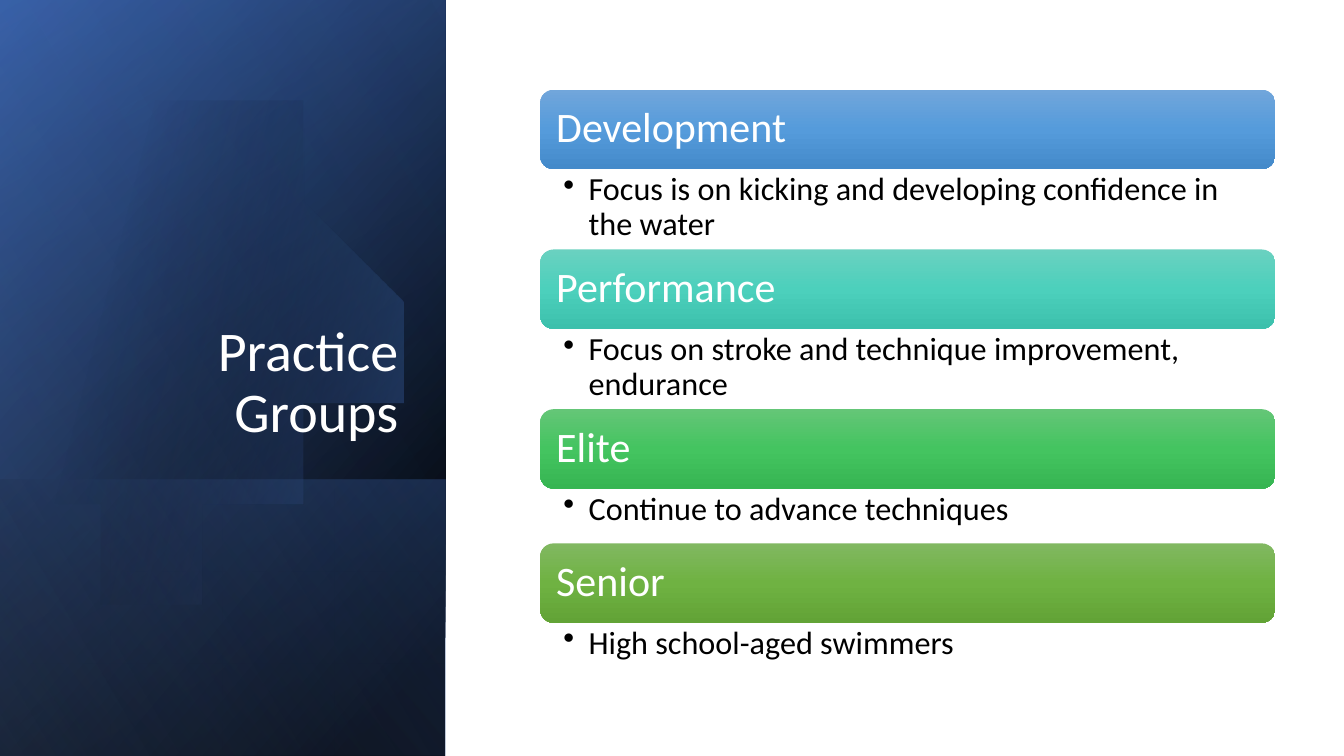
import dataclasses

import pptx
import pptx.dml.color
import pptx.enum.shapes
import pptx.enum.text
import pptx.oxml
import pptx.oxml.ns
import pptx.util

WIDE = pptx.util.Inches(13.33)
HIGH = pptx.util.Inches(7.5)
FONT = "Calibri"
HUES = {
    "black": "000000", "white": "FFFFFF", "navy": "2F5597",
    "blue": "4472C4", "pale": "8FAADC",
}

# Shares of the slide, in percent
SIDE = 33.15
LEFT, SPAN, TOP = 40.2, 54.68, 11.87
BAR = 10.5
TALL, LOW = 10.63, 7.25


@dataclasses.dataclass
class Stop:
    at: int
    hue: str
    alpha: int = 100


@dataclasses.dataclass
class Panel:
    top: float
    angle: int
    stops: list[Stop]


@dataclasses.dataclass
class Group:
    name: str
    note: str
    room: float
    hues: tuple[str, str, str]


BACK = [
    Panel(0, 50, [Stop(8, HUES["black"]), Stop(100, HUES["navy"])]),
    Panel(0, 30, [Stop(0, HUES["black"], 0), Stop(99, HUES["blue"], 46)]),
    Panel(63.47, 130, [Stop(2, HUES["blue"], 29), Stop(100, HUES["black"], 30)]),
]
GLOW = Panel(0, 120, [Stop(0, HUES["black"], 0), Stop(99, HUES["pale"], 11)])
DISC = [Stop(29, HUES["black"], 0), Stop(100, HUES["blue"], 43)]

# Bezier arcs of the disc in inches: two handles and an end point each
START = (-0.15, 1.75)
ARCS = [
    ((-0.15, 1.75), (0, 1.61), (0, 1.61)),
    ((0.23, 1.42), (0.5, 1.28), (0.8, 1.19)),
    ((1.03, 1.13), (1.26, 1.1), (1.49, 1.1)),
    ((2.46, 1.12), (3.35, 1.77), (3.63, 2.75)),
    ((3.98, 3.97), (3.28, 5.23), (2.07, 5.58)),
    ((1.31, 5.8), (0.53, 5.61), (-0.03, 5.14)),
    ((-0.03, 5.14), (-0.15, 5.03), (-0.15, 5.03)),
]

GROUPS = [
    Group("Development", "Focus is on kicking and developing confidence in the water",
          TALL, ("71A6DB", "559BDB", "448ACA")),
    Group("Performance", "Focus on stroke and technique improvement, endurance",
          TALL, ("6AD1C0", "4CD0BC", "3CC0AC")),
    Group("Elite", "Continue to advance techniques",
          LOW, ("64C677", "44C460", "36B552")),
    Group("Senior", "High school-aged swimmers",
          LOW, ("81B861", "6FB242", "62A336")),
]


def across(share: float) -> int:
    return round(WIDE * share / 100)


def down(share: float) -> int:
    return round(HIGH * share / 100)


def shade(shape, stops: list[Stop], angle: int) -> None:
    """Give the shape a gradient, no line and no shadow."""
    marks = "".join(
        f'<a:gs pos="{s.at * 1000}"><a:srgbClr val="{s.hue}">'
        f'<a:alpha val="{s.alpha * 1000}"/></a:srgbClr></a:gs>' for s in stops)
    shape.shadow.inherit = False
    shape.line.fill.background()
    shape.fill.gradient()
    props = shape.element.spPr
    props.replace(
        props.find(pptx.oxml.ns.qn("a:gradFill")),
        pptx.oxml.parse_xml(
            f'<a:gradFill {pptx.oxml.ns.nsdecls("a")} rotWithShape="1">'
            f'<a:gsLst>{marks}</a:gsLst>'
            f'<a:lin ang="{angle * 60000}" scaled="0"/></a:gradFill>'))


def draw_panel(slide, panel: Panel) -> None:
    """Draw a side panel as a rectangle turned by a quarter and mirrored."""
    wide, high = across(SIDE), down(100 - panel.top)
    shift = (wide - high) // 2
    shape = slide.shapes.add_shape(
        pptx.enum.shapes.MSO_SHAPE.RECTANGLE,
        shift, down(panel.top) - shift, high, wide)
    shape.rotation = 90
    shape.element.spPr.xfrm.set("flipH", "1")
    shade(shape, panel.stops, panel.angle)


def trace(steps: int = 16) -> list[tuple[float, float]]:
    """Points along the arcs of the disc."""
    dots, last = [], START
    for one, two, end in ARCS:
        for step in range(1, steps + 1):
            t = step / steps
            u = 1 - t
            dots.append(tuple(
                u**3 * a + 3 * u * u * t * b + 3 * u * t * t * c + t**3 * d
                for a, b, c, d in zip(last, one, two, end)))
        last = end
    return dots


def draw_disc(slide) -> None:
    pen = slide.shapes.build_freeform(*START, scale=pptx.util.Inches(1))
    pen.add_line_segments(trace(), close=True)
    shade(pen.convert_to_shape(), DISC, 14)


def write(shape, text: str, size: int, hue: str, anchor: str, pads=None):
    """Fill the shape with one paragraph and return it."""
    frame = shape.text_frame
    frame.word_wrap = True
    frame.auto_size = pptx.enum.text.MSO_AUTO_SIZE.NONE
    frame.vertical_anchor = pptx.enum.text.MSO_ANCHOR[anchor]
    if pads:
        side, edge = map(pptx.util.Inches, pads)
        frame.margin_left = frame.margin_right = side
        frame.margin_top = frame.margin_bottom = edge
    para = frame.paragraphs[0]
    para.text = text
    para.line_spacing = 0.9
    para.alignment = pptx.enum.text.PP_ALIGN.LEFT
    para.font.name = FONT
    para.font.size = pptx.util.Pt(size)
    para.font.color.rgb = pptx.dml.color.RGBColor.from_string(HUES[hue])
    return para


def draw_title(slide) -> None:
    title = slide.shapes.title
    title.left, title.top = across(4.8), down(24.53)
    title.width, title.height = across(25.58), down(34.93)
    para = write(title, "Practice Groups", 40, "white", "BOTTOM")
    para.alignment = pptx.enum.text.PP_ALIGN.RIGHT
    slide.shapes.element.append(title.element)  # bring above the panels


def draw_group(slide, group: Group, top: float) -> None:
    bar = slide.shapes.add_shape(
        pptx.enum.shapes.MSO_SHAPE.ROUNDED_RECTANGLE,
        across(LEFT), down(top), across(SPAN), down(BAR))
    shade(bar, [Stop(50 * i, hue) for i, hue in enumerate(group.hues)], 90)
    write(bar, group.name, 30, "white", "MIDDLE", (0.12, 0.12))

    note = slide.shapes.add_textbox(
        across(LEFT), down(top + BAR), across(SPAN), down(group.room))
    para = write(note, group.note, 23, "black", "TOP", (0.23, 0.04))
    props = para._p.get_or_add_pPr()
    dent = pptx.util.Inches(0.25)
    props.set("marL", str(dent))
    props.set("indent", str(-dent))
    bullet = pptx.oxml.parse_xml(
        f'<a:buChar {pptx.oxml.ns.nsdecls("a")} char="•"/>')
    props.find(pptx.oxml.ns.qn("a:defRPr")).addprevious(bullet)


def main() -> None:
    deck = pptx.Presentation()
    deck.slide_width, deck.slide_height = WIDE, HIGH
    slide = deck.slides.add_slide(deck.slide_layouts.get_by_name("Title Only"))
    for panel in BACK:
        draw_panel(slide, panel)
    draw_disc(slide)
    draw_panel(slide, GLOW)
    draw_title(slide)
    top = TOP
    for group in GROUPS:
        draw_group(slide, group, top)
        top += BAR + group.room
    deck.save("out.pptx")


if __name__ == "__main__":
    main()
